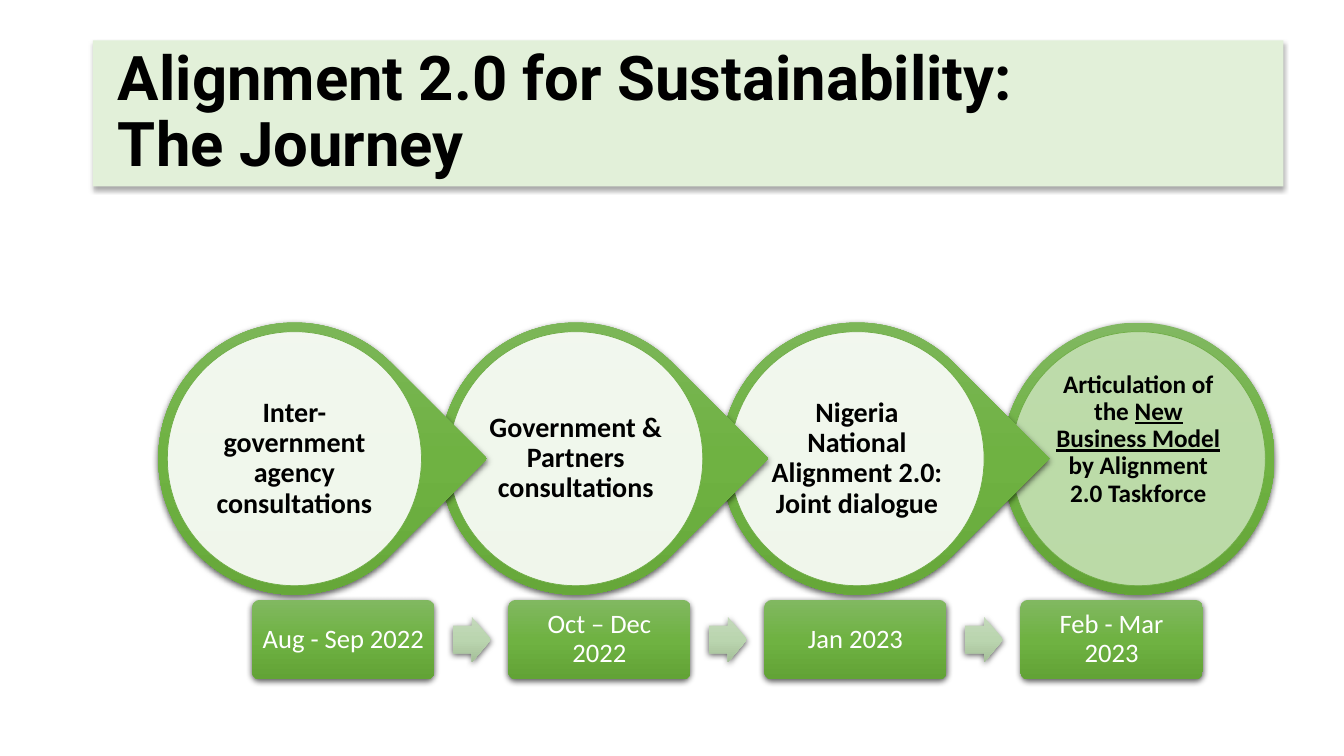
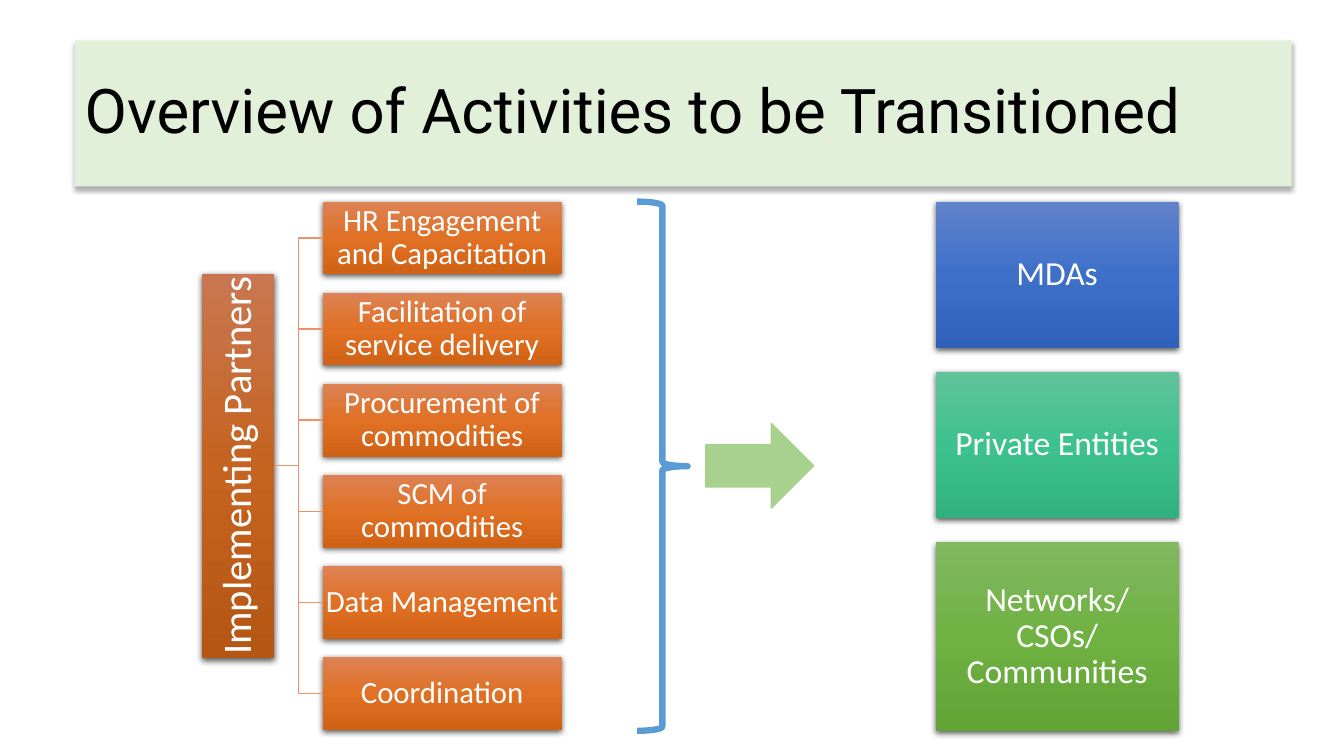
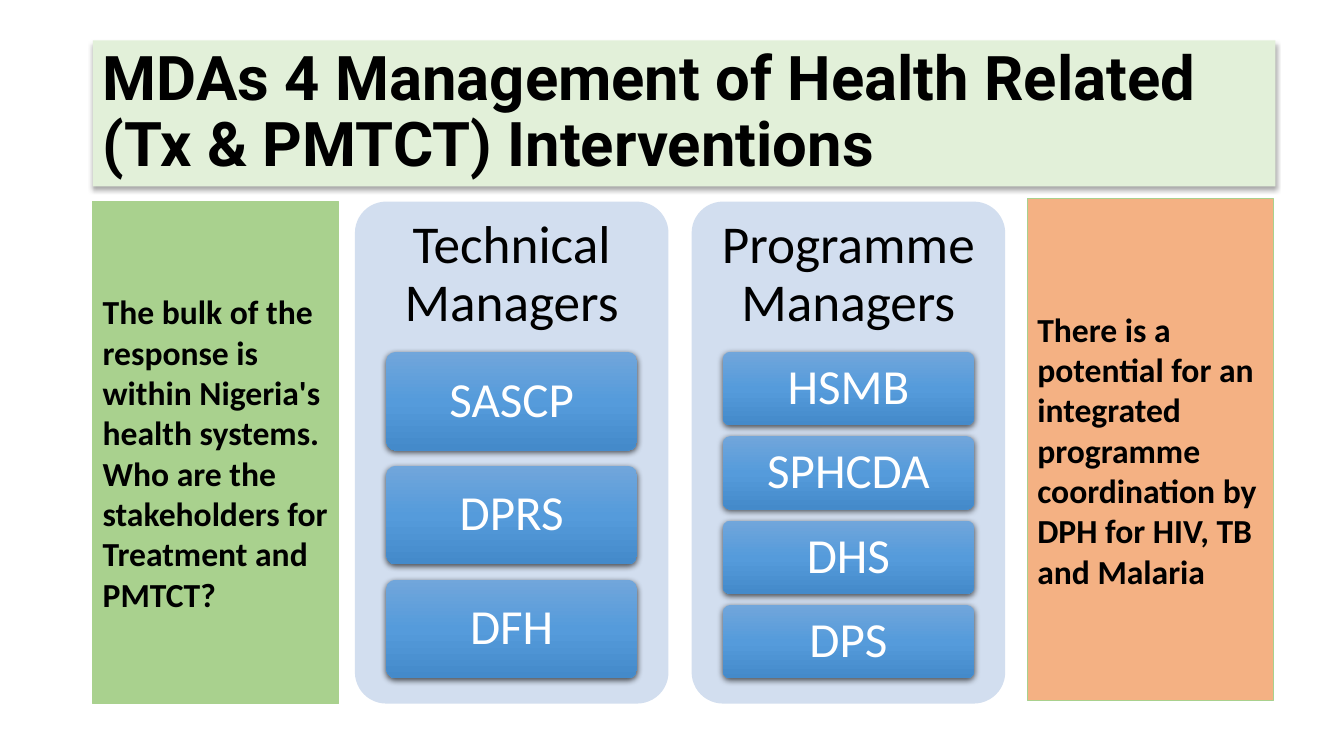
from copy import deepcopy

from lxml.etree import SubElement
from pptx import Presentation
from pptx.dml.color import RGBColor
from pptx.enum.shapes import MSO_CONNECTOR, MSO_SHAPE as SHAPE
from pptx.enum.text import MSO_ANCHOR as ANCHOR, MSO_AUTO_SIZE, PP_ALIGN as ALIGN
from pptx.oxml.ns import qn
from pptx.util import Inches, Pt

COLORS = {
    "black": "000000", "white": "FFFFFF", "band": "E2F0D9", "mint": "C5E0B4",
    "green": "70AD47", "light_green": "A9D18E", "peach": "F4B183",
    "blue": "5B9BD5", "panel": "D2DEEF", "branch": "EF9166",
}
GRADIENTS = {
    "green": ("81B861", "6FB242", "62A336"),
    "pale": ("C4D9BB", "BAD5AF", "A5BF99"),
    "rust": ("C87751", "C56320", "B65615"),
    "orange": ("DD8254", "E07024", "D06216"),
    "royal": ("6183CB", "3E70CA", "3062BB"),
    "teal": ("60C39A", "3DC18F", "31B080"),
    "blue": ("71A6DB", "559BDB", "448ACA"),
}
TITLE_FONT, BODY_FONT = "Roboto", "Calibri"


def rgb(name):
    """Return the named palette colour."""
    return RGBColor.from_string(COLORS[name])


def add_shadow(sp, alpha=63, blur=4.5, dist=1.5):
    """Give a shape a soft black shadow falling downwards."""
    sp.shadow.inherit = False
    effects = sp._element.spPr.find(qn("a:effectLst"))
    shadow = SubElement(effects, qn("a:outerShdw"), blurRad=str(Pt(blur)),
                        dist=str(Pt(dist)), dir="5400000", rotWithShape="0")
    color = SubElement(shadow, qn("a:srgbClr"), val=COLORS["black"])
    SubElement(color, qn("a:alpha"), val=str(alpha * 1000))


def fill_gradient(sp, name):
    """Fill a shape with a three-stop gradient from top to bottom."""
    sp.fill.gradient()
    sp.fill.gradient_angle = 270
    grad = sp._element.spPr.find(qn("a:gradFill"))
    grad.set("rotWithShape", "0")
    stops = grad.find(qn("a:gsLst"))
    stops.append(deepcopy(stops[-1]))
    for stop, pos, color in zip(sp.fill.gradient_stops, (0, 0.5, 1), GRADIENTS[name]):
        stop.position = pos
        stop.color.rgb = RGBColor.from_string(color)


def add_shape(slide, kind, box, fill=None, line=None, width=1, adj=()):
    """Add a flat preset shape at a box given in inches."""
    sp = slide.shapes.add_shape(kind, *map(Inches, box))
    sp.shadow.inherit = False
    for i, value in enumerate(adj):
        sp.adjustments[i] = value
    if fill:
        sp.fill.solid()
        sp.fill.fore_color.rgb = rgb(fill)
    else:
        sp.fill.background()
    if line:
        sp.line.color.rgb = rgb(line)
        sp.line.width = Pt(width)
    else:
        sp.line.fill.background()
    return sp


def add_glossy(slide, kind, box, gradient, adj=()):
    """Add a shape with a gradient and a shadow."""
    sp = add_shape(slide, kind, box, adj=adj)
    fill_gradient(sp, gradient)
    add_shadow(sp)
    return sp


def set_text(sp, text, size, color="white", font=BODY_FONT, bold=False,
             align=ALIGN.CENTER, anchor=ANCHOR.MIDDLE, margins=(0.1, 0.05), spacing=0.9):
    """Write text into a shape and format its runs."""
    tf = sp.text_frame
    tf.word_wrap = True
    tf.auto_size = MSO_AUTO_SIZE.NONE
    tf.vertical_anchor = anchor
    tf.margin_left = tf.margin_right = Inches(margins[0])
    tf.margin_top = tf.margin_bottom = Inches(margins[1])
    tf.text = text
    for p in tf.paragraphs:
        p.alignment = align
        p.line_spacing = spacing
        for r in p.runs:
            format_run(r, size, color, font, bold)


def format_run(r, size, color, font=BODY_FONT, bold=False):
    """Set the font of one run."""
    r.font.size = Pt(size)
    r.font.name = font
    r.font.bold = bold
    r.font.color.rgb = rgb(color)


def add_titled_slide(prs, title, left, width, bold=True):
    """Add a slide whose title sits on the pale green band."""
    slide = prs.slides.add_slide(prs.slide_layouts[5])
    sp = slide.shapes.title
    sp.left, sp.top, sp.width, sp.height = map(Inches, (left, 0.4, width, 1.45))
    sp.fill.solid()
    sp.fill.fore_color.rgb = rgb("band")
    add_shadow(sp, 32, 3.5, 2.2)
    set_text(sp, title, 44, "black", TITLE_FONT, bold, ALIGN.LEFT)
    return slide


def stack(top, height, count, gap):
    """Return the tops and the common height of equally spaced rows."""
    row = (height - gap * (count - 1)) / count
    return [top + i * (row + gap) for i in range(count)], row


def add_stage(slide, left, top, text, last=False):
    """Add one ring of the journey with its disc and wording."""
    size, rim = 2.7, 0.09
    kind = SHAPE.OVAL if last else SHAPE.TEAR
    ring = add_glossy(slide, kind, (left, top, size, size), "green")
    ring.rotation = 0 if last else 45
    inner = size - 2 * rim
    disc = add_shape(slide, SHAPE.OVAL, (left + rim, top + rim, inner, inner),
                     "mint" if last else "white", "green", 0.5)
    color = disc._element.spPr.find(qn("a:solidFill"))[0]
    SubElement(color, qn("a:alpha"), val="90000")
    set_text(disc, text, 18 if last else 20, "black", bold=True, margins=(0.02, 0.02))
    return disc


def add_journey(slide, left, top):
    """Add the four overlapping stages, the last one behind."""
    pitch = 2.79
    disc = add_stage(slide, left + 3 * pitch, top, "Articulation of the ", last=True)
    disc.text_frame.margin_bottom = Inches(0.4)
    p = disc.text_frame.paragraphs[0]
    for text, underline in (("New Business Model ", True),
                            ("by Alignment 2.0 Taskforce", False)):
        r = p.add_run()
        r.text = text
        format_run(r, 18, "black", bold=True)
        r.font.underline = underline
    stages = ("Inter-government agency consultations",
              "Government & Partners consultations",
              "Nigeria National Alignment 2.0: Joint dialogue")
    for i, text in reversed(list(enumerate(stages))):
        add_stage(slide, left + i * pitch, top, text)


def add_timeline(slide, left, top):
    """Add the dates below the stages, joined by block arrows."""
    width, height, pitch = 1.81, 0.79, 2.54
    dates = (("Aug - Sep 2022", 0.05), ("Oct – Dec 2022", 0.1),
             ("Jan 2023", 0.1), ("Feb - Mar 2023", 0.1))
    for i, (date, margin) in enumerate(dates):
        x = left + i * pitch
        if i:
            add_glossy(slide, SHAPE.RIGHT_ARROW, (x - 0.55, top + 0.17, 0.38, 0.45),
                       "pale", (0.6, 0.5))
        sp = add_glossy(slide, SHAPE.ROUNDED_RECTANGLE, (x, top, width, height),
                        "green", (0.1,))
        set_text(sp, date, 19, margins=(margin, 0.05))


def add_partner_tree(slide, left, top, height):
    """Add the partners bar with a branch to each activity."""
    bar_height = 3.81
    bar = add_glossy(slide, SHAPE.RECTANGLE,
                     (left, top + (height - bar_height) / 2, 0.72, bar_height), "rust")
    set_text(bar, "Implementing Partners", 29, margins=(0.02, 0.02))
    bar._element.txBody.bodyPr.set("vert", "vert270")
    activities = ("HR Engagement and Capacitation", "Facilitation of service delivery",
                  "Procurement of commodities", "SCM of commodities",
                  "Data Management", "Coordination")
    tops, row = stack(top, height, len(activities), 0.18)
    for y, activity in zip(tops, activities):
        sp = add_glossy(slide, SHAPE.RECTANGLE, (left + 1.2, y, 2.37, row), "orange")
        set_text(sp, activity, 22, margins=(0.02, 0.02))
        branch = slide.shapes.add_connector(MSO_CONNECTOR.ELBOW, 0, 0, 0, 0)
        branch.begin_connect(bar, 3)
        branch.end_connect(sp, 1)
        branch.line.color.rgb = rgb("branch")
        branch.line.width = Pt(1)
        SubElement(branch._element.spPr, qn("a:effectLst"))


def add_receivers(slide, left, top):
    """Add the column of bodies that take the activities over."""
    for text, gradient, height in (("MDAs", "royal", 1.45),
                                   ("Private Entities", "teal", 1.45),
                                   ("Networks/CSOs/ Communities", "green", 1.87)):
        sp = add_glossy(slide, SHAPE.RECTANGLE, (left, top, 2.41, height), gradient)
        set_text(sp, text, 24, margins=(0.1, 0.1))
        top += height + 0.24


def add_note(slide, left, top, text, fill):
    """Add a tall coloured note beside the panels."""
    sp = add_shape(slide, SHAPE.RECTANGLE, (left, top, 2.44, 4.98), fill, "light_green")
    set_text(sp, text, 24, "black", bold=True, align=ALIGN.LEFT, spacing=1.0)


def add_manager_panel(slide, left, top, heading, units, gap):
    """Add a headed panel with a stack of units."""
    panel = add_shape(slide, SHAPE.ROUNDED_RECTANGLE, (left, top, 3.11, 4.98),
                      "panel", adj=(0.1,))
    set_text(panel, heading, 38, "black", anchor=ANCHOR.TOP, margins=(0.07, 0.07))
    tops, row = stack(top + 1.49, 3.24, len(units), gap)
    for y, unit in zip(tops, units):
        sp = add_glossy(slide, SHAPE.ROUNDED_RECTANGLE, (left + 0.31, y, 2.49, row),
                        "blue", (0.1,))
        set_text(sp, unit, 35)


def build_journey_slide(prs):
    """Build the slide on the journey."""
    slide = add_titled_slide(prs, "Alignment 2.0 for Sustainability:\vThe Journey",
                             0.92, 11.81)
    slide.shapes.title.text_frame.margin_left = Inches(0.25)
    add_journey(slide, 1.57, 3.2)
    add_timeline(slide, 2.5, 5.95)


def build_transition_slide(prs):
    """Build the slide on the activities that move."""
    slide = add_titled_slide(prs, "Overview of Activities to be Transitioned",
                             0.74, 12.07, bold=False)
    add_partner_tree(slide, 2, 2, 5.24)
    add_shape(slide, SHAPE.RIGHT_ARROW, (7, 4.2, 1.07, 0.84), "light_green", "light_green")
    add_receivers(slide, 9.28, 2)
    add_shape(slide, SHAPE.RIGHT_BRACE, (6.32, 2, 0.5, 5.25), line="blue", width=4.5)


def build_managers_slide(prs):
    """Build the slide on the managing bodies."""
    slide = add_titled_slide(
        prs, "MDAs 4 Management of Health Related (Tx & PMTCT) Interventions", 0.92, 11.73)
    add_note(slide, 0.92, 2,
             "The bulk of the response is within Nigeria's health systems.\n"
             "Who are the stakeholders for Treatment and PMTCT?", "light_green")
    add_manager_panel(slide, 3.52, 2, "Technical Managers", ("SASCP", "DPRS", "DFH"), 0.15)
    add_manager_panel(slide, 6.86, 2, "Programme Managers",
                      ("HSMB", "SPHCDA", "DHS", "DPS"), 0.11)
    add_note(slide, 10.19, 1.97,
             "There is a potential for an integrated programme coordination "
             "by DPH for HIV, TB and Malaria", "peach")


def main():
    """Build and save the presentation."""
    prs = Presentation()
    prs.slide_width, prs.slide_height = Inches(13.33), Inches(7.5)
    build_journey_slide(prs)
    build_transition_slide(prs)
    build_managers_slide(prs)
    prs.save("out.pptx")


if __name__ == "__main__":
    main()
